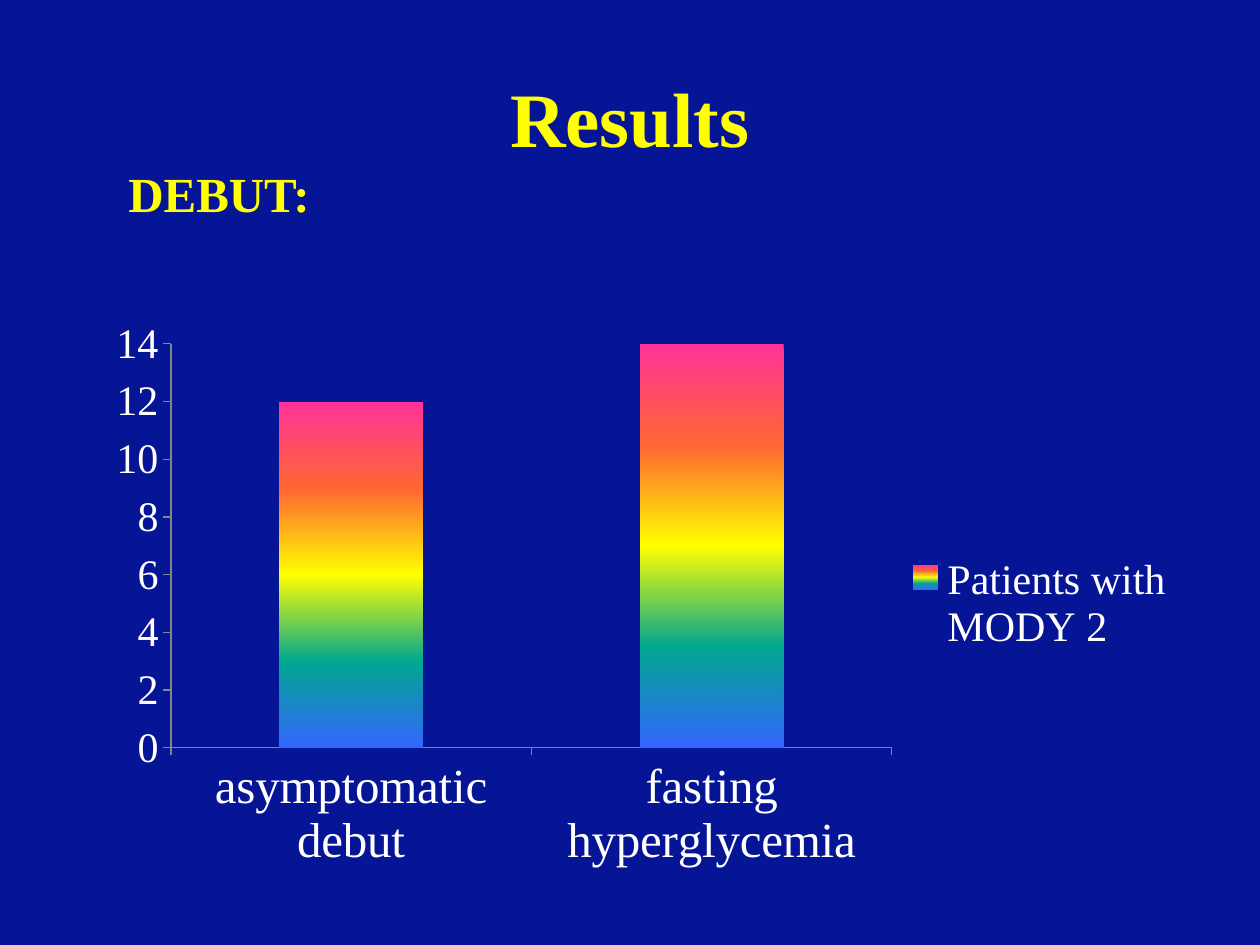
from lxml import etree
from pptx import Presentation
from pptx.chart.data import CategoryChartData
from pptx.dml.color import RGBColor
from pptx.enum.chart import XL_CHART_TYPE, XL_LEGEND_POSITION, XL_TICK_MARK
from pptx.enum.text import MSO_ANCHOR, PP_ALIGN
from pptx.oxml import parse_xml
from pptx.oxml.ns import nsdecls, qn
from pptx.util import Inches, Pt

COLUMNS = XL_CHART_TYPE.COLUMN_CLUSTERED
RIGHT = XL_LEGEND_POSITION.RIGHT
OUTSIDE, NO_TICK = XL_TICK_MARK.OUTSIDE, XL_TICK_MARK.NONE
TOP, MIDDLE = MSO_ANCHOR.TOP, MSO_ANCHOR.MIDDLE
LEFT, CENTER = PP_ALIGN.LEFT, PP_ALIGN.CENTER

FONT = "Times New Roman"
COLORS = {"background": "061496", "heading": "FFFF00", "label": "FFFFFF", "axis": "868686"}
RAINBOW = ["FF3399", "FF6633", "FFFF00", "01A78F", "3366FF"]
WIDTH, HEIGHT = 10, 7.5

# text, (left, top, width, height) in inches, size, alignment, anchor, wrap
HEADINGS = [
    ("Results", (0.5, 0.3, 9, 1.25), 44, CENTER, MIDDLE, True),
    ("DEBUT:", (0.92, 1.25, 1.66, 0.88), 28, LEFT, TOP, False),
]
CATEGORIES = ["asymptomatic debut", "fasting hyperglycemia"]
SERIES = ("Patients with MODY 2", [12, 14])
CHART_BOX = (0.75, 2.5, 8.67, 4.58)
# shares of the chart's size: x, y, w, h
PLOT_SHARE = (0.07, 0.05, 0.66, 0.7)
LEGEND_SHARE = (0.74, 0.41, 0.25, 0.18)


def rgb(name):
    return RGBColor.from_string(COLORS[name])


def style_font(font, size, color, bold=False):
    font.name, font.size, font.bold = FONT, Pt(size), bold
    font.color.rgb = rgb(color)


def add_heading(page, text, place, size, align, anchor, wrap):
    frame = page.shapes.add_textbox(*map(Inches, place)).text_frame
    frame.word_wrap, frame.vertical_anchor = wrap, anchor
    para = frame.paragraphs[0]
    para.alignment = align
    span = para.add_run()
    span.text = text
    style_font(span.font, size, "heading", True)


def set_layout(parent, index, share, inner=False):
    """Give a chart part a manual place, in shares of the chart's size."""
    for old in parent.findall(qn("c:layout")):
        parent.remove(old)
    layout = parse_xml(f"<c:layout {nsdecls('c')}><c:manualLayout/></c:layout>")
    settings = [("layoutTarget", "inner")] if inner else []
    settings += [("xMode", "edge"), ("yMode", "edge"), *zip("xywh", share)]
    for tag, value in settings:
        etree.SubElement(layout[0], qn(f"c:{tag}")).set("val", str(value))
    parent.insert(index, layout)


def fill_gradient(fill, colors):
    """Spread the colours evenly from top to bottom."""
    fill.gradient()
    fill.gradient_angle = 270
    stops = fill.gradient_stops
    stop_list = stops[0]._gs.getparent()
    for stop in list(stop_list):
        stop_list.remove(stop)
    for number, color in enumerate(colors):
        position = number * 100000 // (len(colors) - 1)
        stop_list.append(parse_xml(
            f'<a:gs {nsdecls("a")} pos="{position}"><a:srgbClr val="{color}"/></a:gs>'))


def style_axis(axis, size):
    axis.has_major_gridlines = False
    axis.major_tick_mark, axis.minor_tick_mark = OUTSIDE, NO_TICK
    axis.format.line.color.rgb = rgb("axis")
    axis.format.line.width = Pt(0.75)
    style_font(axis.tick_labels.font, size, "label")


def add_columns(page):
    data = CategoryChartData()
    data.categories = CATEGORIES
    data.add_series(*SERIES)
    chart = page.shapes.add_chart(COLUMNS, *map(Inches, CHART_BOX), data).chart
    chart.has_title = False
    chart.font.name, chart.font.size = FONT, Pt(18)

    style_axis(chart.category_axis, 28)
    style_axis(chart.value_axis, 24)
    scale = chart.value_axis
    scale.minimum_scale, scale.maximum_scale, scale.major_unit = 0, 14, 2

    plot = chart.plots[0]
    plot.gap_width, plot.vary_by_categories = 150, False
    fill_gradient(plot.series[0].format.fill, RAINBOW)

    chart.has_legend = True
    legend = chart.legend
    legend.position, legend.include_in_layout = RIGHT, False
    style_font(legend.font, 24, "label")
    set_layout(legend._element, 1, LEGEND_SHARE)
    set_layout(chart._chartSpace.chart.plotArea, 0, PLOT_SHARE, inner=True)


def main():
    deck = Presentation()
    deck.slide_width, deck.slide_height = Inches(WIDTH), Inches(HEIGHT)
    page = deck.slides.add_slide(deck.slide_layouts[6])
    page.background.fill.solid()
    page.background.fill.fore_color.rgb = rgb("background")
    for heading in HEADINGS:
        add_heading(page, *heading)
    add_columns(page)
    deck.save("out.pptx")


if __name__ == "__main__":
    main()
